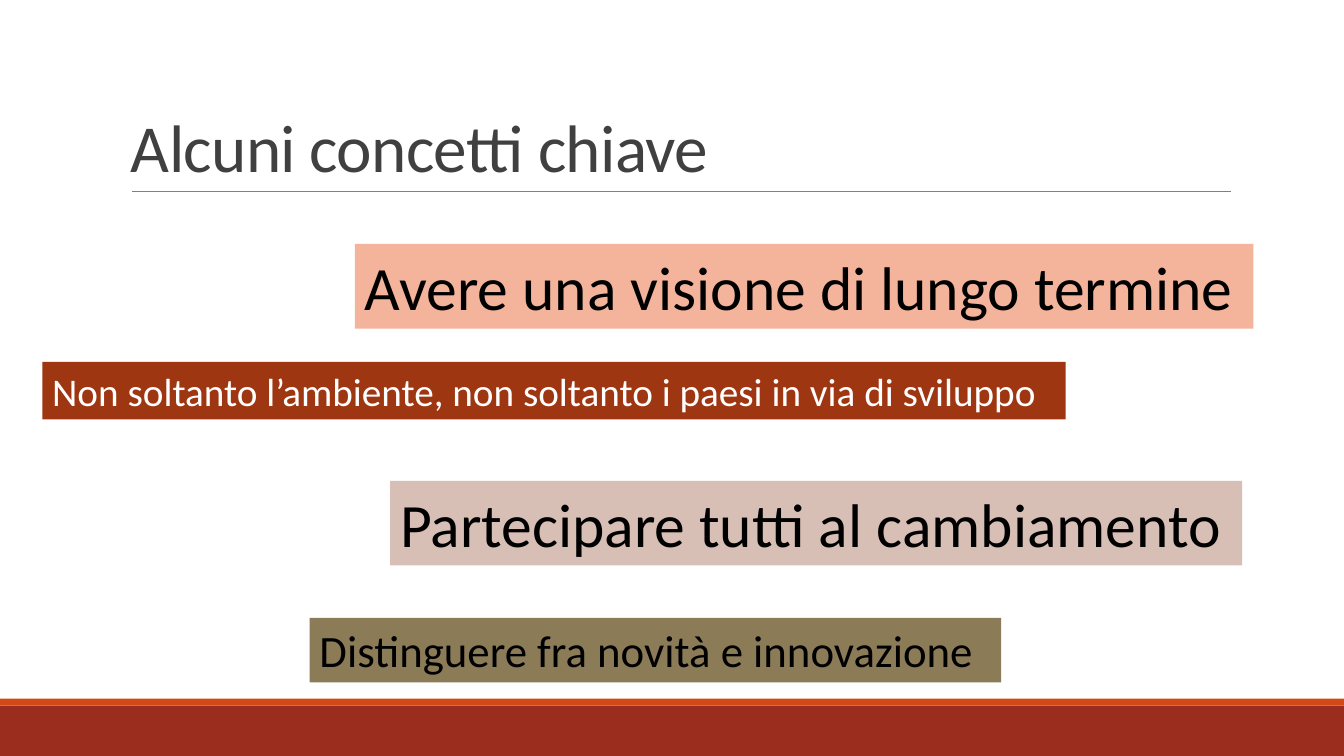
import pptx
import pptx.util
import pptx.dml.color
import pptx.enum.shapes
import pptx.enum.text
import pptx.oxml.ns
import lxml.etree

RGBColor = pptx.dml.color.RGBColor
WHITE = RGBColor(0xFF, 0xFF, 0xFF)
BLACK = RGBColor(0x00, 0x00, 0x00)
CHARCOAL = RGBColor(0x40, 0x40, 0x40)
GREY = RGBColor(0x80, 0x80, 0x80)
BRICK = RGBColor(0x9B, 0x2D, 0x1F)
ORANGE = RGBColor(0xD3, 0x48, 0x17)
PEACH = RGBColor(0xF4, 0xB3, 0x9B)
RUST = RGBColor(0x9E, 0x36, 0x11)
ROSE = RGBColor(0xD8, 0xBF, 0xB6)
OLIVE = RGBColor(0x8B, 0x7B, 0x57)

deck = pptx.Presentation()
deck.slide_width = pptx.util.Inches(13.33)
deck.slide_height = pptx.util.Inches(7.5)
page = deck.slides.add_slide(deck.slide_layouts[6])
page.background.fill.solid()
page.background.fill.fore_color.rgb = WHITE


def place(left, top, width, height):
    across, down = deck.slide_width / 100, deck.slide_height / 100
    return [round(share * unit) for share, unit in
            ((left, across), (top, down), (width, across), (height, down))]


def write(box, text, size, color, anchor=pptx.enum.text.MSO_ANCHOR.TOP):
    box.text_frame.word_wrap = True
    box.text_frame.vertical_anchor = anchor
    para = box.text_frame.paragraphs[0]
    para.alignment = pptx.enum.text.PP_ALIGN.LEFT
    span = para.add_run()
    span.text = text
    for name, value in {"name": "Calibri", "size": pptx.util.Pt(size)}.items():
        setattr(span.font, name, value)
    span.font.color.rgb = color
    return para


bars = [
    (0, 93.33, 100, 6.67, BRICK, None, None, None),
    (0, 92.4, 100, 0.93, ORANGE, None, None, None),
    (29.03, 63.6, 63.39, 11.2, ROSE, "Partecipare tutti al cambiamento", 44, BLACK),
    (26.41, 32.27, 66.84, 11.2, PEACH, "Avere una visione di lungo termine", 44, BLACK),
    (3.15, 47.87, 76.14, 7.6, RUST,
     "Non soltanto l’ambiente, non soltanto i paesi in via di sviluppo", 28, WHITE),
    (23.03, 81.73, 51.46, 8.53, OLIVE, "Distinguere fra novità e innovazione", 32, BLACK),
]
for left, top, width, height, fill, text, size, color in bars:
    bar = page.shapes.add_shape(pptx.enum.shapes.MSO_SHAPE.RECTANGLE,
                                *place(left, top, width, height))
    bar.shadow.inherit = False
    bar.fill.solid()
    bar.fill.fore_color.rgb = fill
    bar.line.fill.background()
    if text:
        write(bar, text, size, color)

start_x, rule_y, end_x, _ = place(9.83, 25.33, 91.6, 0)
rule = page.shapes.add_connector(pptx.enum.shapes.MSO_CONNECTOR.STRAIGHT,
                                 start_x, rule_y, end_x, rule_y)
rule.line.color.rgb = GREY
rule.line.width = pptx.util.Pt(0.5)
lxml.etree.SubElement(rule.element.spPr, pptx.oxml.ns.qn("a:effectLst"))

title = page.shapes.add_textbox(*place(9, 4.13, 82.52, 21.2))
heading = write(title, "Alcuni concetti chiave", 48, CHARCOAL,
                pptx.enum.text.MSO_ANCHOR.BOTTOM)
heading.line_spacing = 0.85
heading.runs[0].font.element.set("spc", "-50") if hasattr(
    heading.runs[0].font, "element") else heading.runs[0].font._element.set("spc", "-50")

deck.save("out.pptx")
